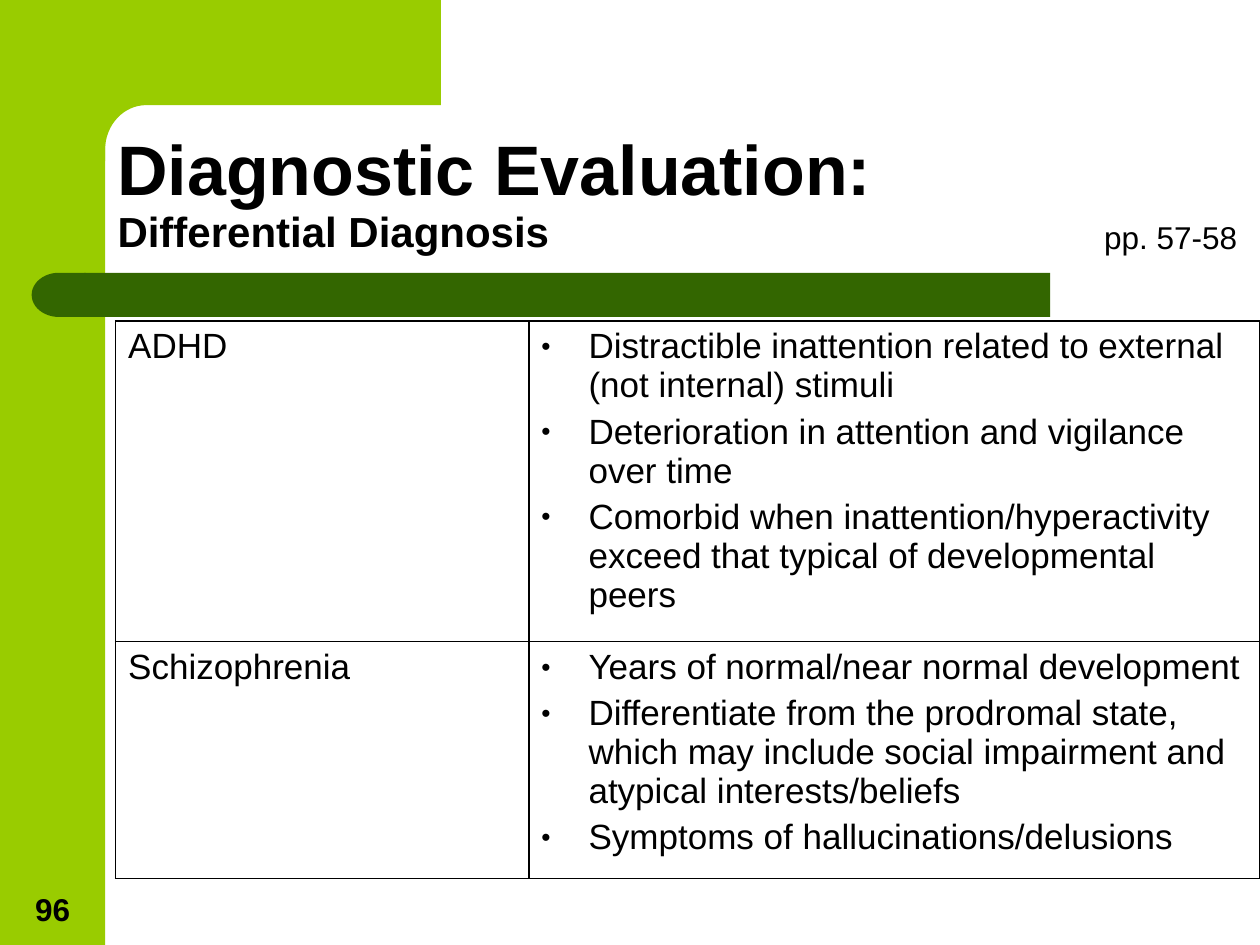
import math

from lxml import etree
from pptx import Presentation
from pptx import util as u
from pptx.dml.color import RGBColor
from pptx.enum import shapes, text
from pptx.oxml import ns

# Content
TITLE = [("Diagnostic Evaluation:", 40), ("Differential Diagnosis", 24)]
PAGES = "pp. 57-58"
NUMBER = "96"
DIAGNOSES = [
    ("ADHD", [
        "Distractible inattention related to external (not internal) stimuli",
        "Deterioration in attention and vigilance over time",
        "Comorbid when inattention/hyperactivity exceed that typical of developmental peers",
    ]),
    ("Schizophrenia", [
        "Years of normal/near normal development",
        "Differentiate from the prodromal state, which may include social "
        "impairment and atypical interests/beliefs",
        "Symptoms of hallucinations/delusions",
    ]),
]

# Format, lengths in centimetres
LIME = RGBColor(0x99, 0xCC, 0x00)
GREEN = RGBColor(0x33, 0x66, 0x00)
BLACK = RGBColor(0, 0, 0)
WHITE = RGBColor(255, 255, 255)
FONT = "Arial"
BAND = 2.12
COLUMNS = [8.33, 14.73]
ROWS = [6.04, 4.48]
INDENT = 0.95


def write(paragraph, words, size=20, bold=False, align=None, before=0):
    run = paragraph.add_run()
    run.text = words
    run.font.name = FONT
    run.font.size = u.Pt(size)
    run.font.bold = bold
    run.font.color.rgb = BLACK
    paragraph.space_before = u.Pt(before)
    if align is not None:
        paragraph.alignment = align


def paint(shape, color):
    shape.shadow.inherit = False
    shape.fill.solid()
    shape.fill.fore_color.rgb = color
    shape.line.fill.background()


def add_block(slide, kind, color, *box):
    shape = slide.shapes.add_shape(kind, *map(u.Cm, box))
    paint(shape, color)
    return shape


def add_box(slide, *box, wrap=True, anchor=text.MSO_ANCHOR.TOP):
    frame = slide.shapes.add_textbox(*map(u.Cm, box)).text_frame
    frame.word_wrap = wrap
    frame.vertical_anchor = anchor
    return frame


def add_corner(slide):
    """Top band whose inner corner is a quarter ellipse."""
    right, bottom, inner_x, radius_x, radius_y = 8.89, 3.25, 2.12, 0.83, 0.9
    angles = [math.radians(90 * step / 16) for step in range(17)]
    arc = [(inner_x + radius_x * (1 - math.sin(a)),
            BAND + radius_y * (1 - math.cos(a))) for a in angles]
    points = [(right, BAND), *arc, (inner_x, bottom), (1.27, bottom), (1.27, 0)]
    builder = slide.shapes.build_freeform(u.Cm(right), 0)
    builder.add_line_segments([(u.Cm(x), u.Cm(y)) for x, y in points])
    paint(builder.convert_to_shape(), LIME)


def add_bullet(paragraph):
    properties = paragraph._p.get_or_add_pPr()
    properties.set("marL", str(u.Cm(INDENT)))
    properties.set("indent", str(-u.Cm(INDENT)))
    color = etree.SubElement(properties, ns.qn("a:buClr"))
    etree.SubElement(color, ns.qn("a:srgbClr"), val=str(BLACK))
    etree.SubElement(properties, ns.qn("a:buSzPct"), val="75000")
    etree.SubElement(properties, ns.qn("a:buFont"), typeface=FONT)
    etree.SubElement(properties, ns.qn("a:buChar"), char="•")


def format_cell(cell):
    properties = cell._tc.get_or_add_tcPr()
    for side in ("lnL", "lnR", "lnT", "lnB"):
        line = etree.SubElement(properties, ns.qn("a:" + side), w=str(u.Pt(1)))
        fill = etree.SubElement(line, ns.qn("a:solidFill"))
        etree.SubElement(fill, ns.qn("a:srgbClr"), val=str(BLACK))
    cell.fill.solid()
    cell.fill.fore_color.rgb = WHITE


def add_diagnoses(slide):
    table = slide.shapes.add_table(
        len(ROWS), len(COLUMNS), u.Cm(2.33), u.Cm(6.47),
        u.Cm(sum(COLUMNS)), u.Cm(sum(ROWS))).table
    table.first_row = table.horz_banding = False
    for column, width in zip(table.columns, COLUMNS):
        column.width = u.Cm(width)
    for row, height, (name, signs) in zip(table.rows, ROWS, DIAGNOSES):
        row.height = u.Cm(height)
        name_cell, signs_cell = row.cells
        write(name_cell.text_frame.paragraphs[0], name)
        frame = signs_cell.text_frame
        for index, sign in enumerate(signs):
            paragraph = frame.add_paragraph() if index else frame.paragraphs[0]
            write(paragraph, sign, before=4 if index else 0)
            add_bullet(paragraph)
        for cell in row.cells:
            format_cell(cell)


def main():
    presentation = Presentation()
    presentation.slide_width, presentation.slide_height = u.Cm(25.4), u.Cm(19.05)
    slide = presentation.slides.add_slide(presentation.slide_layouts[6])

    # Green frame and rule
    kinds = shapes.MSO_SHAPE
    add_block(slide, kinds.RECTANGLE, LIME, 0, 0, BAND, 19.05)
    add_corner(slide)
    add_block(slide, kinds.RECTANGLE, GREEN, 1.7, 5.5, 19.47, 0.89)
    cap = add_block(slide, kinds.FLOWCHART_DELAY, GREEN, 0.64, 5.5, 1.09, 0.89)
    cap._element.spPr.get_or_add_xfrm().set("flipH", "1")

    # Slide number, title and page reference
    bottom = text.MSO_ANCHOR.BOTTOM
    number = add_box(slide, 0, 17.48, BAND, 1.35, anchor=bottom)
    write(number.paragraphs[0], NUMBER, 18, True, text.PP_ALIGN.CENTER)
    heading = add_box(slide, BAND, BAND, 22.01, 3.17, anchor=bottom).paragraphs[0]
    heading.line_spacing = 0.9
    for index, (words, size) in enumerate(TITLE):
        if index:
            heading.add_line_break()
        write(heading, words, size, True)
    pages = add_box(slide, 22.01, 4.27, 3.23, 1.02, wrap=False)
    write(pages.paragraphs[0], PAGES, 18)

    add_diagnoses(slide)
    presentation.save("out.pptx")


if __name__ == "__main__":
    main()
